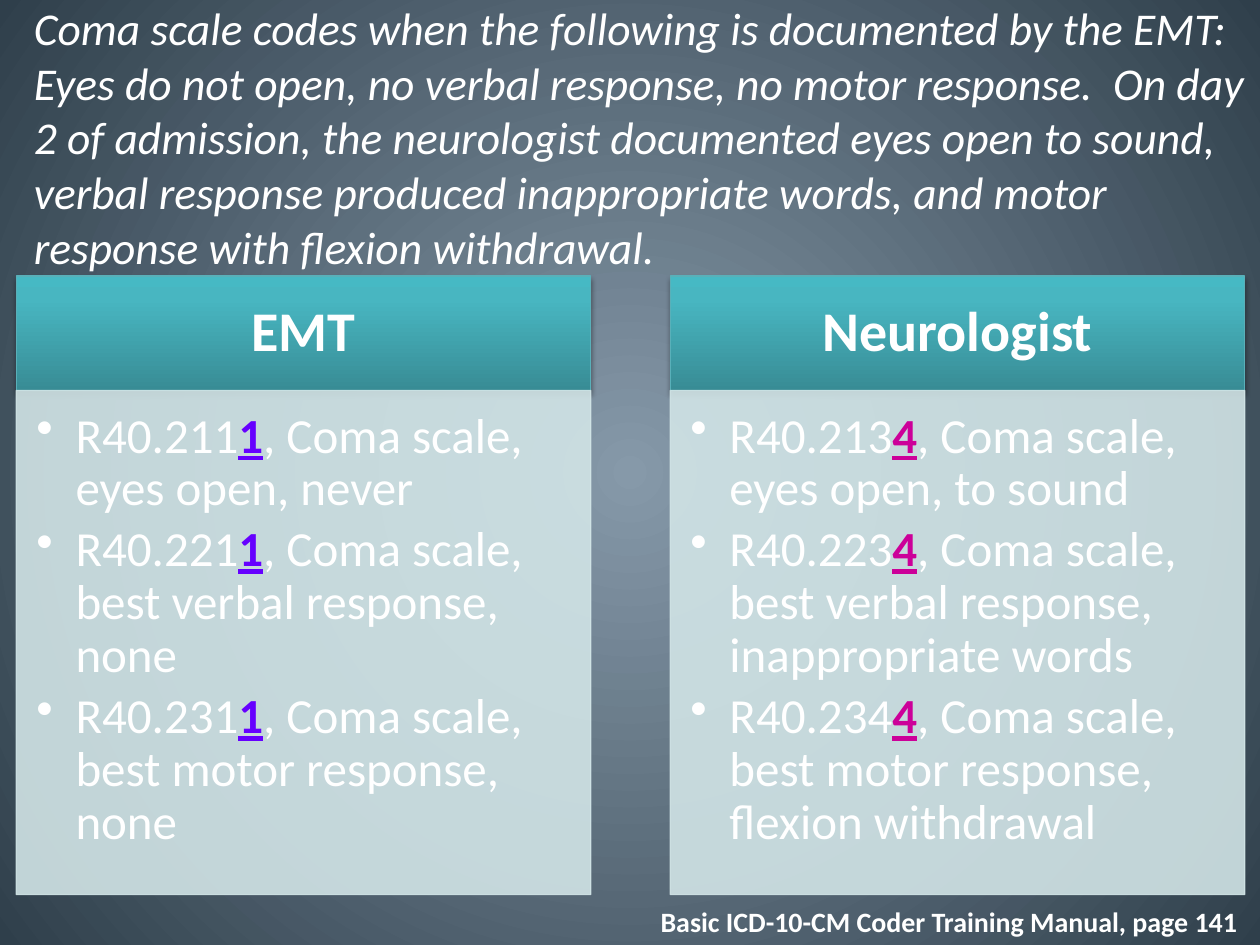
from dataclasses import dataclass

import pptx
import pptx.dml.color
import pptx.enum.shapes
import pptx.enum.text
import pptx.oxml
import pptx.oxml.ns
import pptx.util
from pptx.dml.color import RGBColor
from pptx.util import Inches

FONT = "Calibri"
WHITE = RGBColor(0xFF, 0xFF, 0xFF)
SLATE = RGBColor(0x86, 0x99, 0xA9)
NAVY = RGBColor(0x2F, 0x3F, 0x4B)
DARK_TEAL = RGBColor(0x38, 0x8C, 0x95)
TEAL = RGBColor(0x48, 0xB6, 0xC1)
BRIGHT_TEAL = RGBColor(0x46, 0xB9, 0xC4)
TEAL_EDGE = RGBColor(0x59, 0xB0, 0xB9)
PALE_TEAL = RGBColor(0xD1, 0xE4, 0xE6)
VIOLET = RGBColor(0x66, 0x00, 0xFF)
MAGENTA = RGBColor(0xCC, 0x00, 0x99)

COLUMN_WIDTH = 4.56
HEADER_TOP = 2.19
HEADER_HEIGHT = 0.91
CODES_HEIGHT = 4
RADIAL = '<a:path path="circle"><a:fillToRect l="50000" t="50000" r="50000" b="50000"/></a:path>'
UPWARD = '<a:lin ang="16200000" scaled="0"/>'
HEADER_SHADOW = (
    '<a:outerShdw blurRad="39370" dist="22860" dir="5400000" rotWithShape="0">'
    '<a:srgbClr val="000000"><a:alpha val="35000"/></a:srgbClr></a:outerShdw>'
)


@dataclass
class Code:
    stem: str
    meaning: str


@dataclass
class Column:
    left: float
    heading: str
    time_digit: str
    digit_color: RGBColor
    codes: list[Code]


COLUMNS = [
    Column(0.13, "EMT", "1", VIOLET, [
        Code("R40.211", "eyes open, never"),
        Code("R40.221", "best verbal response, none"),
        Code("R40.231", "best motor response, none"),
    ]),
    Column(5.32, "Neurologist", "4", MAGENTA, [
        Code("R40.213", "eyes open, to sound"),
        Code("R40.223", "best verbal response, inappropriate words"),
        Code("R40.234", "best motor response, flexion withdrawal"),
    ]),
]
SCENARIO = (
    "Coma scale codes when the following is documented by the EMT: Eyes do not open, "
    "no verbal response, no motor response.  On day 2 of admission, the neurologist "
    "documented eyes open to sound, verbal response produced inappropriate words, "
    "and motor response with flexion withdrawal."
)


def drawing_xml(tag: str, content: str):
    namespace = pptx.oxml.ns.nsdecls("a")
    return pptx.oxml.parse_xml(f"<a:{tag} {namespace}>{content}</a:{tag}>")


def set_gradient(properties, stops: list[tuple[int, RGBColor]], direction: str) -> None:
    stop_xml = "".join(
        f'<a:gs pos="{position * 1000}"><a:srgbClr val="{color}"/></a:gs>'
        for position, color in stops
    )
    solid = properties.find(pptx.oxml.ns.qn("a:solidFill"))
    gradient = drawing_xml("gradFill", f"<a:gsLst>{stop_xml}</a:gsLst>{direction}")
    properties.replace(solid, gradient)


def format_run(run, size: float, color: RGBColor = WHITE, bold: bool = False,
               italic: bool = False, underline: bool = False) -> None:
    font = run.font
    font.name, font.size, font.color.rgb = FONT, pptx.util.Pt(size), color
    font.bold, font.italic, font.underline = bold, italic, underline


def set_margins(frame, left: float, top: float, right: float, bottom: float) -> None:
    frame.margin_left, frame.margin_top = Inches(left), Inches(top)
    frame.margin_right, frame.margin_bottom = Inches(right), Inches(bottom)


def add_panel(slide, left: float, top: float, height: float, fill: RGBColor, edge: RGBColor):
    panel = slide.shapes.add_shape(
        pptx.enum.shapes.MSO_SHAPE.RECTANGLE,
        Inches(left), Inches(top), Inches(COLUMN_WIDTH), Inches(height),
    )
    panel.shadow.inherit = False
    panel.fill.solid()
    panel.fill.fore_color.rgb = fill
    panel.line.color.rgb = edge
    panel.line.width = pptx.util.Pt(0.75)
    panel.text_frame.word_wrap = True
    return panel


def add_header(slide, column: Column) -> None:
    header = add_panel(slide, column.left, HEADER_TOP, HEADER_HEIGHT, TEAL, TEAL_EDGE)
    properties = header.element.spPr
    set_gradient(properties, [(0, DARK_TEAL), (80, TEAL), (100, BRIGHT_TEAL)], UPWARD)
    properties.replace(
        properties.find(pptx.oxml.ns.qn("a:effectLst")),
        drawing_xml("effectLst", HEADER_SHADOW),
    )
    frame = header.text_frame
    set_margins(frame, 0.25, 0.14, 0.25, 0.14)
    frame.vertical_anchor = pptx.enum.text.MSO_ANCHOR.MIDDLE
    frame.text = column.heading
    heading = frame.paragraphs[0]
    heading.alignment = pptx.enum.text.PP_ALIGN.CENTER
    heading.line_spacing = 0.9
    format_run(heading.runs[0], 32, bold=True)


def add_codes(slide, column: Column) -> None:
    panel = add_panel(slide, column.left, HEADER_TOP + HEADER_HEIGHT, CODES_HEIGHT,
                      PALE_TEAL, PALE_TEAL)
    for color in panel.element.spPr.iter(pptx.oxml.ns.qn("a:srgbClr")):
        alpha = drawing_xml("alpha", "")
        alpha.set("val", "90000")
        color.append(alpha)
    frame = panel.text_frame
    set_margins(frame, 0.16, 0.16, 0.22, 0.24)
    frame.vertical_anchor = pptx.enum.text.MSO_ANCHOR.TOP
    for index, code in enumerate(column.codes):
        entry = frame.add_paragraph() if index else frame.paragraphs[0]
        entry.alignment = pptx.enum.text.PP_ALIGN.LEFT
        entry.line_spacing = 0.9
        entry.space_after = pptx.util.Pt(4.5)
        properties = entry._p.get_or_add_pPr()
        properties.set("marL", str(Inches(0.31)))
        properties.set("indent", str(Inches(-0.31)))
        bullet = drawing_xml("buChar", "")
        bullet.set("char", "•")
        properties.append(bullet)
        stem, digit, meaning = (entry.add_run() for _ in range(3))
        stem.text = code.stem
        digit.text = column.time_digit
        meaning.text = f", Coma scale, {code.meaning}"
        format_run(stem, 28)
        format_run(digit, 28, column.digit_color, bold=True, underline=True)
        format_run(meaning, 28)


def add_label(slide, text: str, left: float, top: float, width: float, height: float):
    label = slide.shapes.add_textbox(Inches(left), Inches(top), Inches(width), Inches(height))
    label.text_frame.word_wrap = True
    label.text_frame.text = text
    return label.text_frame


def main() -> None:
    deck = pptx.Presentation()
    deck.slide_width, deck.slide_height = Inches(10), Inches(7.5)
    slide = deck.slides.add_slide(deck.slide_layouts[6])
    slide.background.fill.solid()
    backdrop = next(slide.element.iter(pptx.oxml.ns.qn("p:bgPr")))
    set_gradient(backdrop, [(0, SLATE), (100, NAVY)], RADIAL)

    citation = add_label(slide, "Basic ICD-10-CM Coder Training Manual, page 141",
                         2.75, 7.13, 7.17, 0.37)
    citation.paragraphs[0].alignment = pptx.enum.text.PP_ALIGN.RIGHT
    format_run(citation.paragraphs[0].runs[0], 16, bold=True)

    for column in COLUMNS:
        add_header(slide, column)
        add_codes(slide, column)

    scenario = add_label(slide, SCENARIO, 0.17, 0.25, 9.83, 1.67)
    scenario.vertical_anchor = pptx.enum.text.MSO_ANCHOR.MIDDLE
    format_run(scenario.paragraphs[0].runs[0], 26, italic=True)
    deck.save("out.pptx")


if __name__ == "__main__":
    main()
